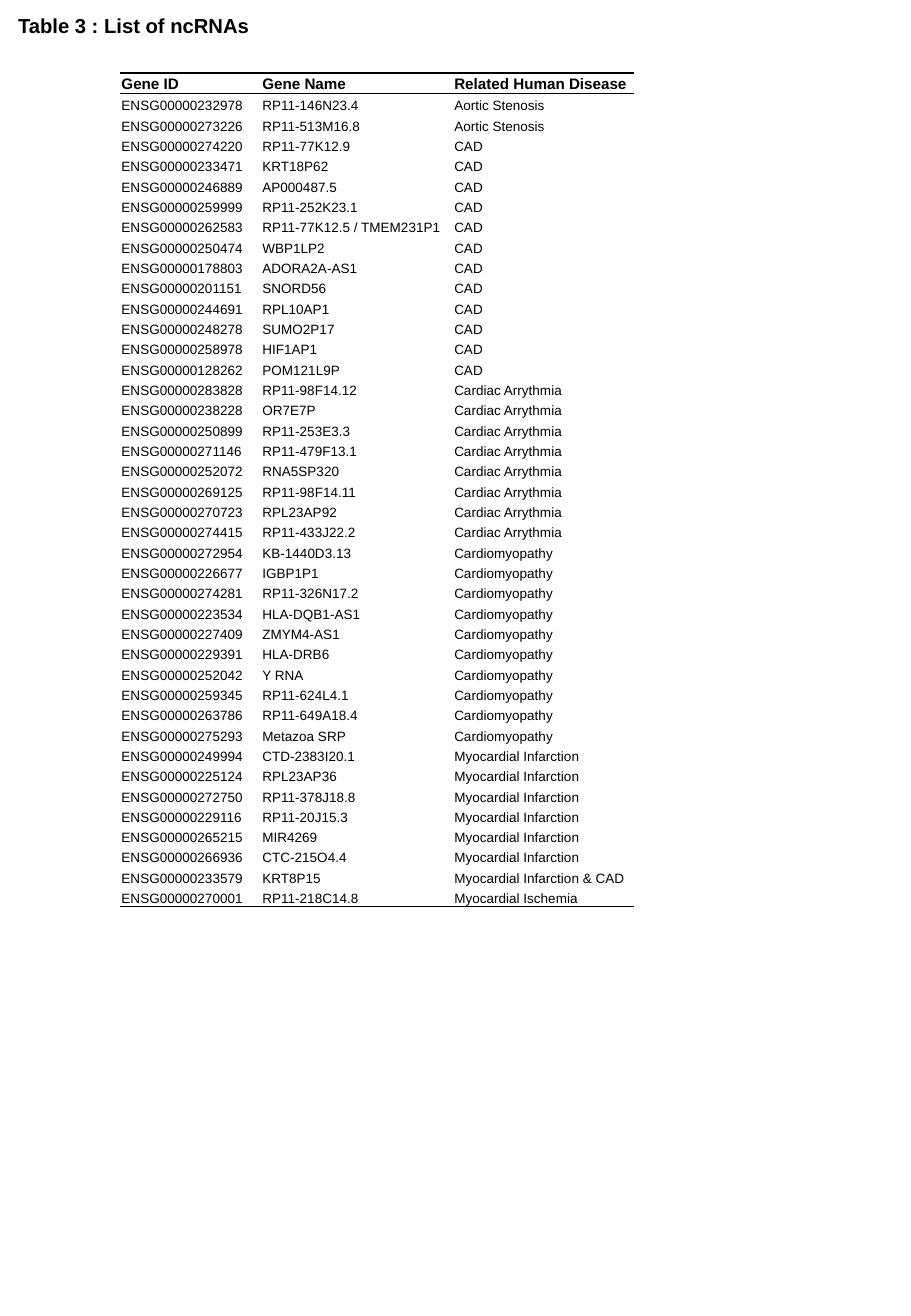
from pptx import Presentation
from pptx.dml.color import RGBColor
from pptx.enum.text import MSO_ANCHOR, MSO_AUTO_SIZE
from pptx.oxml import parse_xml
from pptx.oxml.ns import nsdecls, qn
from pptx.util import Inches, Pt

BOTTOM = MSO_ANCHOR.BOTTOM
GROW = MSO_AUTO_SIZE.SHAPE_TO_FIT_TEXT
COLORS = {"ink": "000000"}
NO_STYLE = "{2D5ABB26-0587-4C30-8999-92F81FD0307C}"

HEADER = ("Gene ID", "Gene Name", "Related Human Disease")
COL_WIDTHS = (1.16, 1.58, 1.49)
TABLE_HEIGHT = 6.87

# Genes by disease: digits of the Ensembl ID, gene name
GENES = {
    "Aortic Stenosis": [
        ("232978", "RP11-146N23.4"),
        ("273226", "RP11-513M16.8"),
    ],
    "CAD": [
        ("274220", "RP11-77K12.9"),
        ("233471", "KRT18P62"),
        ("246889", "AP000487.5"),
        ("259999", "RP11-252K23.1"),
        ("262583", "RP11-77K12.5 / TMEM231P1"),
        ("250474", "WBP1LP2"),
        ("178803", "ADORA2A-AS1"),
        ("201151", "SNORD56"),
        ("244691", "RPL10AP1"),
        ("248278", "SUMO2P17"),
        ("258978", "HIF1AP1"),
        ("128262", "POM121L9P"),
    ],
    "Cardiac Arrythmia": [
        ("283828", "RP11-98F14.12"),
        ("238228", "OR7E7P"),
        ("250899", "RP11-253E3.3"),
        ("271146", "RP11-479F13.1"),
        ("252072", "RNA5SP320"),
        ("269125", "RP11-98F14.11"),
        ("270723", "RPL23AP92"),
        ("274415", "RP11-433J22.2"),
    ],
    "Cardiomyopathy": [
        ("272954", "KB-1440D3.13"),
        ("226677", "IGBP1P1"),
        ("274281", "RP11-326N17.2"),
        ("223534", "HLA-DQB1-AS1"),
        ("227409", "ZMYM4-AS1"),
        ("229391", "HLA-DRB6"),
        ("252042", "Y RNA"),
        ("259345", "RP11-624L4.1"),
        ("263786", "RP11-649A18.4"),
        ("275293", "Metazoa SRP"),
    ],
    "Myocardial Infarction": [
        ("249994", "CTD-2383I20.1"),
        ("225124", "RPL23AP36"),
        ("272750", "RP11-378J18.8"),
        ("229116", "RP11-20J15.3"),
        ("265215", "MIR4269"),
        ("266936", "CTC-215O4.4"),
    ],
    "Myocardial Infarction & CAD": [("233579", "KRT8P15")],
    "Myocardial Ischemia": [("270001", "RP11-218C14.8")],
}


class Page:
    """Holds the text style and the current slide."""

    def __init__(self, slide, font="Arial", color="ink"):
        self.slide = slide
        self.font = font
        self.color = COLORS[color]

    def run(self, tf, text, size, bold=False):
        r = tf.paragraphs[0].add_run()
        r.text = text
        r.font.name = self.font
        r.font.size = Pt(size)
        r.font.bold = bold
        r.font.color.rgb = RGBColor.from_string(self.color)

    def title(self, text, left, top, width, height):
        sp = self.slide.shapes.add_textbox(
            Inches(left), Inches(top), Inches(width), Inches(height))
        tf = sp.text_frame
        tf.word_wrap = True
        tf.auto_size = GROW
        self.run(tf, text, 12, bold=True)

    def border(self, cell, sides):
        tc_pr = cell._tc.get_or_add_tcPr()
        for i, side in enumerate(sides):
            tc_pr.insert(i, parse_xml(
                f'<a:ln{side} {nsdecls("a")} w="{Pt(1)}"><a:solidFill>'
                f'<a:srgbClr val="{self.color}"/></a:solidFill></a:ln{side}>'))

    def cell(self, cell, text, size, bold, sides):
        cell.fill.background()
        cell.vertical_anchor = BOTTOM
        cell.margin_left = cell.margin_right = cell.margin_top = Inches(0.01)
        cell.margin_bottom = 0
        self.run(cell.text_frame, text, size, bold)
        self.border(cell, sides)

    def table(self, rows, left, top, widths, height):
        frame = self.slide.shapes.add_table(
            len(rows), len(widths), Inches(left), Inches(top),
            Inches(sum(widths)), Inches(height))
        table = frame.table
        table.first_row = table.horz_banding = False
        for style in frame._element.iter(qn("a:tableStyleId")):
            style.text = NO_STYLE
        for col, width in zip(table.columns, widths):
            col.width = Inches(width)
        # Rules above and below the header, and under the last row
        rules = {0: "TB", len(rows) - 1: "B"}
        for i, values in enumerate(rows):
            table.rows[i].height = Inches(height / len(rows))
            head = i == 0
            for j, text in enumerate(values):
                self.cell(table.cell(i, j), text, 9 if head else 8, head,
                          rules.get(i, ""))


def main():
    prs = Presentation()
    prs.slide_width, prs.slide_height = Inches(7.5), Inches(10.83)
    s = prs.slides.add_slide(prs.slide_layouts[6])
    page = Page(s)

    # Title
    page.title("Table 3 : List of ncRNAs", 0.05, 0.06, 7.02, 0.3)

    # Gene table
    rows = [HEADER] + [(f"ENSG00000{digits}", name, disease)
                       for disease, genes in GENES.items()
                       for digits, name in genes]
    page.table(rows, 0.99, 0.6, COL_WIDTHS, TABLE_HEIGHT)

    prs.save("out.pptx")


if __name__ == "__main__":
    main()
